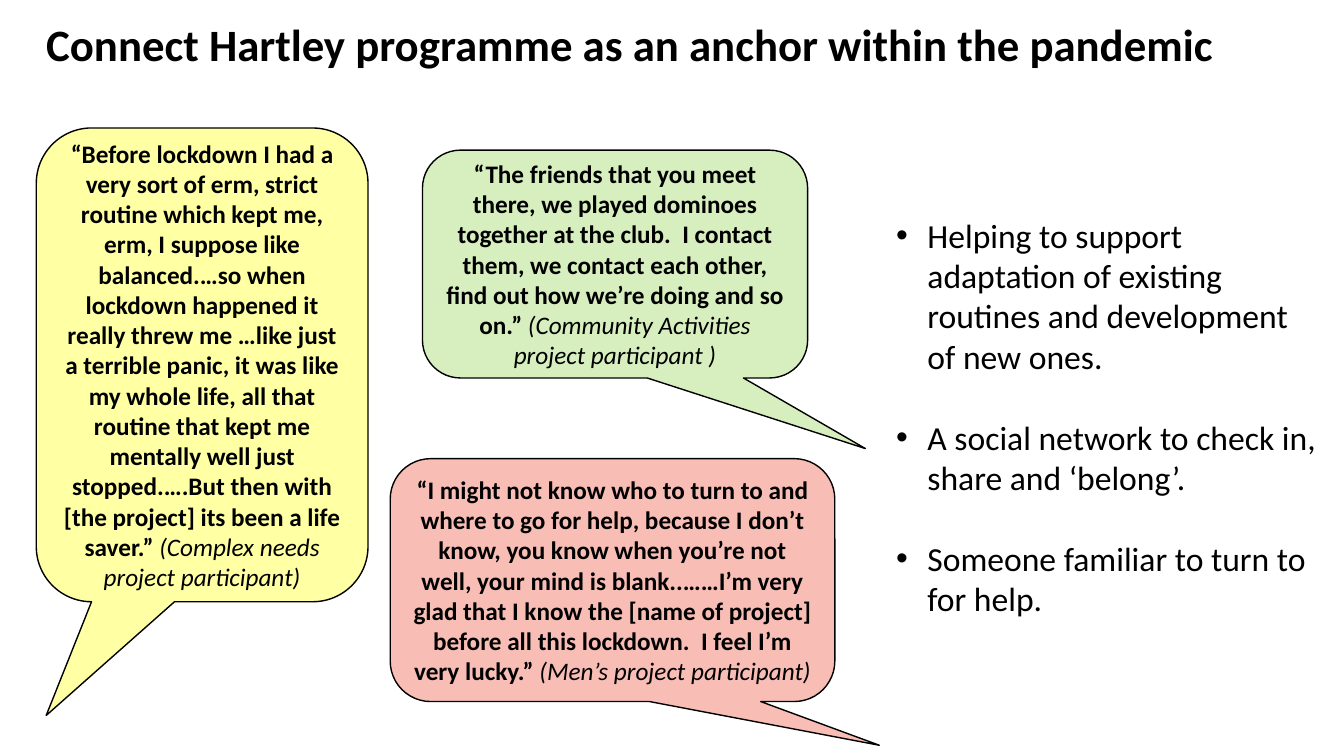
from lxml import etree
from pptx import Presentation
from pptx.dml.color import RGBColor
from pptx.enum.shapes import MSO_SHAPE
from pptx.enum.text import MSO_ANCHOR, PP_ALIGN
from pptx.oxml.ns import qn
from pptx.util import Pt

PX = 9144  # 100 px to the inch
FONT = "Calibri"
CALLOUT = MSO_SHAPE.ROUNDED_RECTANGULAR_CALLOUT
MIDDLE = MSO_ANCHOR.MIDDLE
CENTER = PP_ALIGN.CENTER

BLACK = RGBColor(0x00, 0x00, 0x00)
YELLOW = RGBColor(0xFF, 0xFF, 0x00)
GREEN = RGBColor(0x92, 0xD0, 0x50)
RED = RGBColor(0xEE, 0x4A, 0x34)
FILL_OPACITY = 36  # percent
BULLET_INDENT = 31

TITLE = "Connect Hartley programme as an anchor within the pandemic"

# box, callout tip (relative to the centre), fill, quote, speaker
QUOTES = [
    ((36, 127, 329, 470), (-0.47, 0.74), YELLOW,
     "“Before lockdown I had a very sort of erm, strict routine which kept me, "
     "erm, I suppose like balanced.…so when lockdown happened it really threw me "
     "…like just a terrible panic, it was like my whole life, all that routine "
     "that kept me mentally well just stopped.….But then with [the project] its "
     "been a life saver.” ",
     "(Complex needs project participant)"),
    ((419, 149, 382, 226), (0.65, 0.81), GREEN,
     "“The friends that you meet there, we played dominoes together at the club.  "
     "I contact them, we contact each other, find out how we’re doing and so on.” ",
     "(Community Activities project participant )"),
    ((387, 455, 441, 241), (0.6, 0.68), RED,
     "“I might not know who to turn to and where to go for help, because I don’t "
     "know, you know when you’re not well, your mind is blank..……I’m very glad "
     "that I know the [name of project] before all this lockdown.  I feel I’m "
     "very lucky.” ",
     "(Men’s project participant)"),
]

BENEFITS = [
    "Helping to support adaptation of existing routines and development of new ones.",
    "A social network to check in, share and ‘belong’.",
    "Someone familiar to turn to for help.",
]


def to_emu(box):
    return [length * PX for length in box]


def style_font(font, size):
    font.name = FONT
    font.size = Pt(size)
    font.color.rgb = BLACK


def add_text_frame(slide, box):
    text_frame = slide.shapes.add_textbox(*to_emu(box)).text_frame
    text_frame.word_wrap = True
    return text_frame


def add_title(slide, text, box):
    text_frame = add_text_frame(slide, box)
    text_frame.vertical_anchor = MIDDLE
    paragraph = text_frame.paragraphs[0]
    paragraph.text = text
    paragraph.line_spacing = 0.9
    style_font(paragraph.font, 32)
    paragraph.font.bold = True


def set_opacity(shape, percent):
    color = shape.fill._xPr.find(qn("a:solidFill"))[0]
    etree.SubElement(color, qn("a:alpha"), val=str(percent * 1000))


def add_quote(slide, box, tip, color, quote, speaker):
    shape = slide.shapes.add_shape(CALLOUT, *to_emu(box))
    shape.shadow.inherit = False
    shape.adjustments[0], shape.adjustments[1] = tip
    shape.fill.solid()
    shape.fill.fore_color.rgb = color
    set_opacity(shape, FILL_OPACITY)
    shape.line.color.rgb = BLACK
    shape.line.width = Pt(1)

    text_frame = shape.text_frame
    text_frame.word_wrap = True
    text_frame.vertical_anchor = MIDDLE
    paragraph = text_frame.paragraphs[0]
    paragraph.alignment = CENTER
    style_font(paragraph.font, 18)
    for text, is_quote in ((quote, True), (speaker, False)):
        run = paragraph.add_run()
        run.text = text
        style_font(run.font, 18)
        run.font.bold = is_quote
        run.font.italic = not is_quote


def add_bullet(paragraph):
    properties = paragraph._p.get_or_add_pPr()
    properties.set("marL", str(BULLET_INDENT * PX))
    properties.set("indent", str(-BULLET_INDENT * PX))
    bullet_font = etree.Element(qn("a:buFont"), typeface="Arial")
    bullet = etree.Element(qn("a:buChar"), char="•")
    properties.insert_element_before(bullet_font, "a:buChar", "a:defRPr")
    properties.insert_element_before(bullet, "a:defRPr")


def add_bullet_list(slide, items, box):
    text_frame = add_text_frame(slide, box)
    text_frame.text = "\n".join(items)
    for paragraph in text_frame.paragraphs:
        style_font(paragraph.font, 24)
        paragraph.space_after = Pt(29)
        add_bullet(paragraph)


def main():
    presentation = Presentation()
    presentation.slide_width = 1333 * PX
    presentation.slide_height = 750 * PX
    slide = presentation.slides.add_slide(presentation.slide_layouts[6])

    add_title(slide, TITLE, (36, -26, 1231, 145))
    for quote in QUOTES:
        add_quote(slide, *quote)
    add_bullet_list(slide, BENEFITS, (879, 208, 441, 460))

    presentation.save("out.pptx")


if __name__ == "__main__":
    main()
